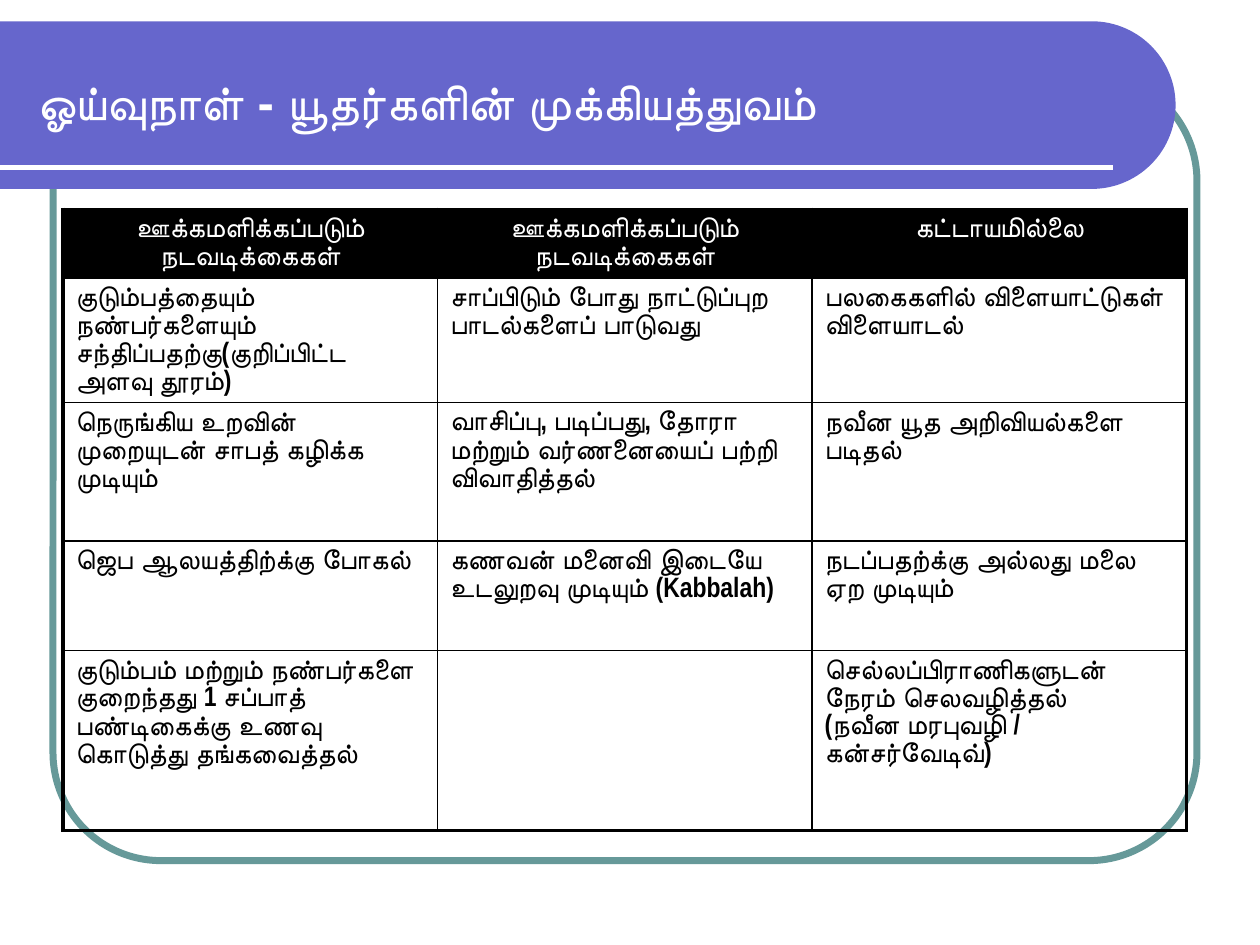
from math import cos, pi, sin

from lxml.etree import SubElement
from pptx import Presentation
from pptx.dml.color import RGBColor
from pptx.enum.shapes import MSO_CONNECTOR as Connector, MSO_SHAPE as Shape
from pptx.enum.text import MSO_ANCHOR as Anchor, PP_ALIGN as Align
from pptx.oxml import parse_xml
from pptx.oxml.ns import nsdecls, qn
from pptx.util import Cm, Pt

BLACK = RGBColor(0x00, 0x00, 0x00)
WHITE = RGBColor(0xFF, 0xFF, 0xFF)
VIOLET = RGBColor(0x66, 0x66, 0xCC)
TEAL = RGBColor(0x66, 0x99, 0x99)

TITLE = "ஓய்வுநாள் - யூதர்களின் முக்கியத்துவம்"
ROWS = [
    ["ஊக்கமளிக்கப்படும்\nநடவடிக்கைகள்",
     "ஊக்கமளிக்கப்படும்\nநடவடிக்கைகள்",
     "கட்டாயமில்லை"],
    ["குடும்பத்தையும் நண்பர்களையும் சந்திப்பதற்கு(குறிப்பிட்ட அளவு தூரம்)",
     "சாப்பிடும் போது நாட்டுப்புற பாடல்களைப் பாடுவது",
     "பலகைகளில் விளையாட்டுகள் விளையாடல்"],
    ["நெருங்கிய உறவின் முறையுடன் சாபத் கழிக்க முடியும்",
     "வாசிப்பு, படிப்பது, தோரா மற்றும் வர்ணனையைப் பற்றி விவாதித்தல்",
     "நவீன யூத அறிவியல்களை படிதல்"],
    ["ஜெப ஆலயத்திற்க்கு போகல்",
     "கணவன் மனைவி இடையே உடலுறவு முடியும் (Kabbalah)",
     "நடப்பதற்க்கு அல்லது மலை ஏற முடியும்"],
    ["குடும்பம் மற்றும் நண்பர்களை குறைந்தது 1 சப்பாத் பண்டிகைக்கு உணவு கொடுத்து தங்கவைத்தல்",
     "",
     "செல்லப்பிராணிகளுடன் நேரம் செலவழித்தல்\n(நவீன மரபுவழி / கன்சர்வேடிவ்)"],
]
ROW_HEIGHTS = [1.3, 2.16, 2.79, 2.21, 3.63]
COLUMN_WIDTH = 7.55


def write_text(frame, text, font="Arial Narrow", size=16, color=BLACK,
               align=Align.LEFT, spacing=None, shadow=False):
    """Fill a text frame with one bold paragraph per line of text."""
    frame.word_wrap = True
    for index, line in enumerate(text.split("\n")):
        paragraph = frame.add_paragraph() if index else frame.paragraphs[0]
        paragraph.alignment = align
        paragraph.line_spacing = spacing
        run = paragraph.add_run()
        run.text = line
        run.font.size = Pt(size)
        run.font.bold = True
        run.font.color.rgb = color
        if shadow:
            run._r.get_or_add_rPr().append(parse_xml(
                f'<a:effectLst {nsdecls("a")}><a:outerShdw blurRad="38100" dist="38100" '
                'dir="2700000"><a:srgbClr val="000000"/></a:outerShdw></a:effectLst>'))
        run.font.name = font


def set_borders(cell, widths):
    """Draw black cell borders; widths are points for left, right, top, bottom."""
    properties = cell._tc.get_or_add_tcPr()
    for side, width in zip("LRTB", widths):
        line = SubElement(properties, qn(f"a:ln{side}"), w=str(Pt(width)))
        fill = SubElement(line, qn("a:solidFill"))
        SubElement(fill, qn("a:srgbClr"), val=str(BLACK))


class SlideBuilder:
    thin, thick = 1, 2.25

    def __init__(self, slide):
        self.slide = slide
        self.shapes = slide.shapes

    def rounded_frame(self, left, top, width, height, color, weight, rounding):
        shape = self.shapes.add_shape(Shape.ROUNDED_RECTANGLE, Cm(left), Cm(top),
                                      Cm(width), Cm(height))
        shape.adjustments[0] = rounding
        shape.shadow.inherit = False
        shape.fill.background()
        shape.line.color.rgb = color
        shape.line.width = Pt(weight)

    def banner(self, top, right, height, color, steps=60):
        """Draw a band from the left slide edge that ends in a half circle."""
        radius = height / 2
        angles = [pi * (step / steps - 0.5) for step in range(steps + 1)]
        arc = [(Cm(right - radius + radius * cos(angle)),
                Cm(top + radius + radius * sin(angle))) for angle in angles]
        builder = self.shapes.build_freeform(0, Cm(top))
        builder.add_line_segments(arc + [(0, Cm(top + height))])
        shape = builder.convert_to_shape()
        shape.shadow.inherit = False
        shape.fill.solid()
        shape.fill.fore_color.rgb = color
        shape.line.fill.background()

    def rule(self, left, right, y, color, weight):
        line = self.shapes.add_connector(Connector.STRAIGHT, Cm(left), Cm(y),
                                         Cm(right), Cm(y))
        line.line.color.rgb = color
        line.line.width = Pt(weight)
        SubElement(line._element.spPr, qn("a:effectLst"))

    def text(self, left, top, width, height, text, **style):
        box = self.shapes.add_textbox(Cm(left), Cm(top), Cm(width), Cm(height))
        box.text_frame.vertical_anchor = Anchor.TOP
        write_text(box.text_frame, text, **style)

    def table(self, left, top, column_width, row_heights, rows):
        last_row, last_column = len(rows) - 1, len(rows[0]) - 1
        table = self.shapes.add_table(
            len(rows), len(rows[0]), Cm(left), Cm(top),
            Cm(column_width * len(rows[0])), Cm(sum(row_heights))).table
        table.horz_banding = False
        for column in table.columns:
            column.width = Cm(column_width)
        for row, values in enumerate(rows):
            table.rows[row].height = Cm(row_heights[row])
            for column, value in enumerate(values):
                cell = table.cell(row, column)
                on_edge = (column == 0, column == last_column, row == 0, row == last_row)
                set_borders(cell, [self.thick if edge else self.thin for edge in on_edge])
                if row == 0:
                    cell.fill.solid()
                    cell.fill.fore_color.rgb = BLACK
                else:
                    cell.fill.background()
                if value:
                    write_text(cell.text_frame, value, spacing=Pt(16),
                               color=BLACK if row else WHITE,
                               align=Align.LEFT if row else Align.CENTER)


def main():
    presentation = Presentation()
    presentation.slide_width, presentation.slide_height = Cm(25.4), Cm(19.05)
    builder = SlideBuilder(presentation.slides.add_slide(presentation.slide_layouts[6]))
    builder.rounded_frame(1.07, 1.47, 23.06, 15.88, TEAL, 4, rounding=0.137)
    builder.banner(0.43, 23.7, 3.38, VIOLET)
    builder.rule(0, 22.43, 3.38, WHITE, 3)
    builder.text(0.5, 1.32, 23.16, 2.54, TITLE, font="Arial", size=28,
                 color=WHITE, shadow=True)
    builder.table(1.27, 4.22, COLUMN_WIDTH, ROW_HEIGHTS, ROWS)
    presentation.save("out.pptx")


if __name__ == "__main__":
    main()
